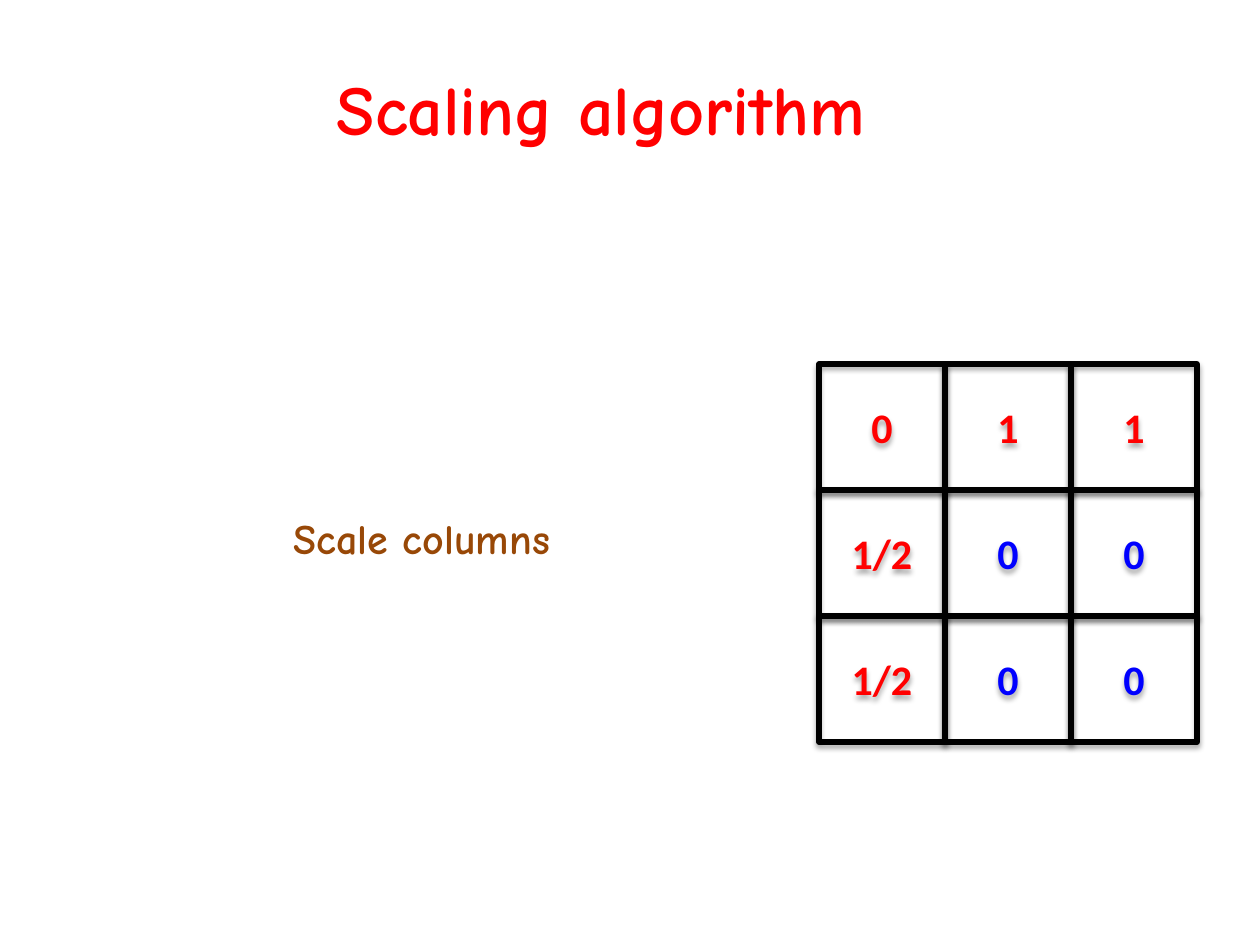
"""Build a slide showing a matrix after its columns are scaled."""
from pptx import Presentation
from pptx.dml.color import RGBColor as RGB
from pptx.enum.shapes import MSO_SHAPE as SHAPE
from pptx.enum.text import MSO_ANCHOR as ANCHOR, MSO_AUTO_SIZE as AUTO, PP_ALIGN as ALIGN
from pptx.util import Inches, Pt

COLORS = {"line": "000000", "red": "FF0000", "blue": "0000FF", "brown": "984807"}
MATRIX = [["0", "1", "1"], ["1/2", "0", "0"], ["1/2", "0", "0"]]
LEFT, TOP, CELL = 6.5, 2.89, 1


def set_text(tf, text, size, font, color, align):
    tf.text = text
    p = tf.paragraphs[0]
    p.alignment = align
    f = p.runs[0].font
    f.size, f.name, f.bold = Pt(size), font, True
    f.color.rgb = RGB.from_string(COLORS[color])


def add_title(s, text):
    sp = s.shapes.title
    sp.left, sp.top = Inches(0.62), Inches(0.05)
    sp.width, sp.height = Inches(8.5), Inches(1.61)
    sp.text_frame.vertical_anchor = ANCHOR.MIDDLE
    set_text(sp.text_frame, text, 40, "Comic Neue", "red", ALIGN.CENTER)


def add_label(s, text):
    tf = s.shapes.add_textbox(Inches(2.23), Inches(4.02), Inches(2.44), Inches(0.5)).text_frame
    tf.word_wrap = False
    tf.auto_size = AUTO.SHAPE_TO_FIT_TEXT
    set_text(tf, text, 24, "Comic Neue", "brown", ALIGN.LEFT)


def add_cell(group, row, col, text):
    sp = group.shapes.add_shape(SHAPE.RECTANGLE, Inches(LEFT + col * CELL),
                                Inches(TOP + row * CELL), Inches(CELL), Inches(CELL))
    sp.fill.background()
    sp.line.color.rgb = RGB.from_string(COLORS["line"])
    sp.line.width = Pt(3)
    sp.text_frame.vertical_anchor = ANCHOR.MIDDLE
    color = "blue" if row and col else "red"
    set_text(sp.text_frame, text, 24, "Calibri", color, ALIGN.CENTER)


def add_matrix(s, matrix):
    group = s.shapes.add_group_shape()
    for row, values in reversed(list(enumerate(matrix))):
        for col, text in enumerate(values):
            add_cell(group, row, col, text)


def main():
    prs = Presentation()
    prs.slide_width, prs.slide_height = Inches(10), Inches(7.5)
    s = prs.slides.add_slide(prs.slide_layouts[0])
    subtitle = s.placeholders[1].element
    subtitle.getparent().remove(subtitle)
    add_matrix(s, MATRIX)
    add_title(s, "Scaling algorithm ")
    add_label(s, "Scale columns")
    prs.save("out.pptx")


if __name__ == "__main__":
    main()
